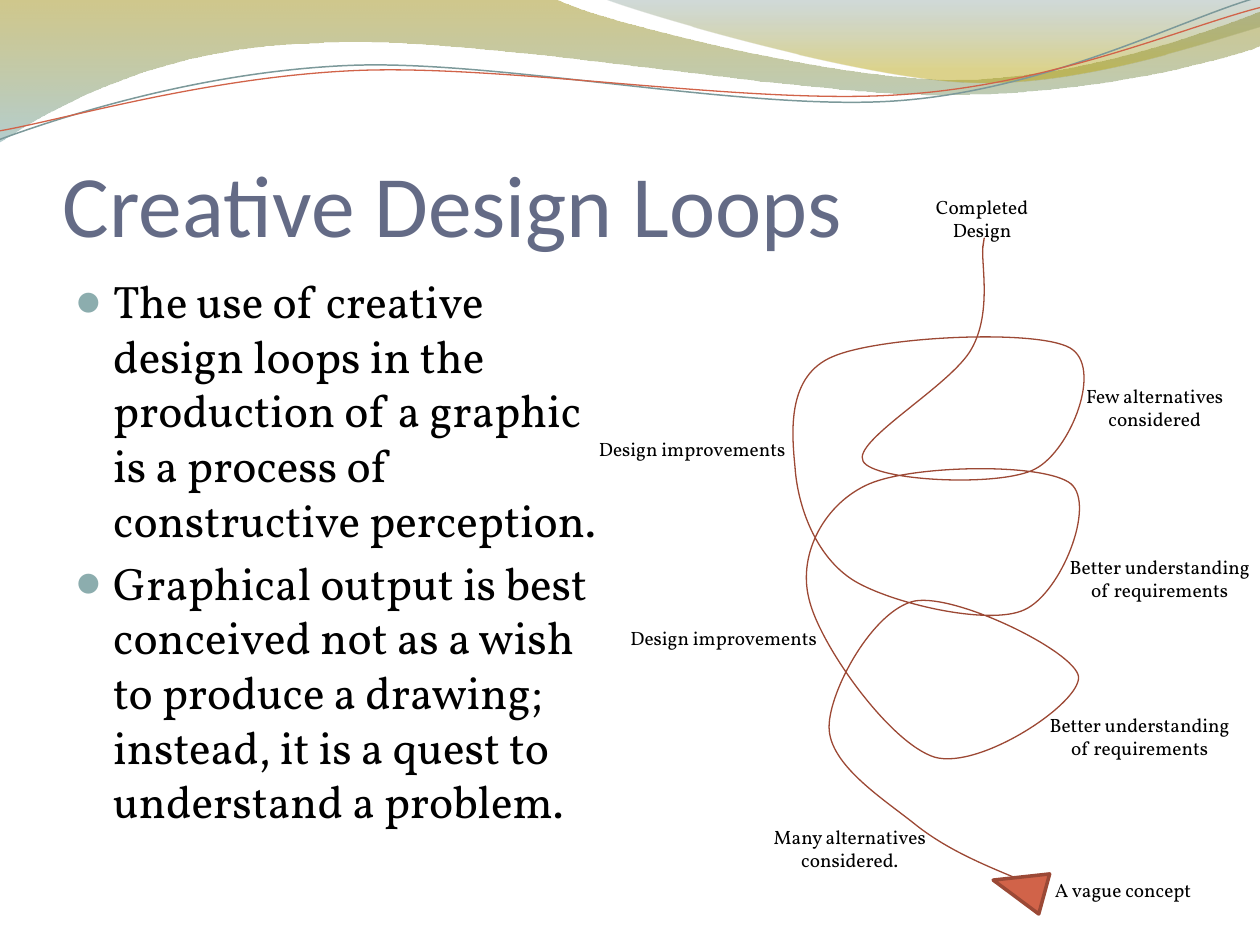
"""Build the Creative Design Loops slide with its wave header and spiral diagram."""
from lxml import etree
from pptx import Presentation
from pptx.dml.color import RGBColor
from pptx.enum.shapes import MSO_SHAPE
from pptx.enum.text import MSO_ANCHOR, MSO_AUTO_SIZE, PP_ALIGN
from pptx.oxml.ns import qn
from pptx.util import Pt

PX = 9144
TRIANGLE = MSO_SHAPE.ISOSCELES_TRIANGLE
TOP, BOTTOM = MSO_ANCHOR.TOP, MSO_ANCHOR.BOTTOM
LEFT, CENTER = PP_ALIGN.LEFT, PP_ALIGN.CENTER
FIT, FIXED = MSO_AUTO_SIZE.SHAPE_TO_FIT_TEXT, MSO_AUTO_SIZE.NONE
color = RGBColor.from_string

deck = Presentation()
deck.slide_width, deck.slide_height = 1000 * PX, 750 * PX
page = deck.slides.add_slide(deck.slide_layouts[6])


def draw_outline(start, segments, close=False):
    """Draw straight (2 numbers) and cubic (6 numbers) segments as one outline."""
    points = [(segment[i] * PX, segment[i + 1] * PX)
              for segment in segments for i in range(0, len(segment), 2)]
    builder = page.shapes.build_freeform(start[0] * PX, start[1] * PX, scale=1.0)
    builder.add_line_segments(points, close=close)
    shape = builder.convert_to_shape()
    shape.shadow.inherit = False
    steps = iter(list(shape._element.spPr.iter(qn("a:lnTo"))))
    for segment in segments:
        first = next(steps)
        if len(segment) == 6:
            first.tag_name = None
            curve = etree.Element(qn("a:cubicBezTo"))
            first.addprevious(curve)
            for node in (first, next(steps), next(steps)):
                curve.append(node[0])
                node.getparent().remove(node)
    return shape


def write_text(lines, at, size=11, font="Vollkorn", ink="000000", aligns=(CENTER,),
               anchor=TOP, fit=FIT, wrap=True, insets=(10, 5, 10, 5), bullet=None):
    """Write one paragraph per line into a text box."""
    box = page.shapes.add_textbox(*(value * PX for value in at))
    frame = box.text_frame
    frame.word_wrap, frame.auto_size, frame.vertical_anchor = wrap, fit, anchor
    (frame.margin_left, frame.margin_top,
     frame.margin_right, frame.margin_bottom) = (value * PX for value in insets)
    for index, line in enumerate(lines):
        para = frame.paragraphs[0] if index == 0 else frame.add_paragraph()
        para.alignment = aligns[index % len(aligns)]
        span = para.add_run()
        span.text = line
        span.font.size, span.font.name = Pt(size), font
        span.font.color.rgb = color(ink)
        if bullet:
            para.space_before = Pt(5)
            props = para._p.get_or_add_pPr()
            props.set("marL", str(30 * PX))
            props.set("indent", str(-30 * PX))
            tint = etree.SubElement(props, qn("a:buClr"))
            etree.SubElement(tint, qn("a:srgbClr"), val=bullet)
            etree.SubElement(props, qn("a:buSzPct"), val="95000")
            etree.SubElement(props, qn("a:buFont"), typeface="Calibri")
            etree.SubElement(props, qn("a:buChar"), char="●")


waves = [
    ((0, -1),
     [(440, -1), (476, 17, 664, 63, 758, 63), (853, 63, 958, 26, 1000, 9), (1001, 36),
      (983, 44, 870, 76, 746, 75), (622, 75, 382, 28, 257, 34), (129, 36, 46, 83, -1, 113),
      (0, -1)],
     [(0, "978500", 45), (1, "77A5A6", 55)]),
    ((479, -1),
     [(509, 11, 682, 62, 769, 65), (856, 69, 961, 32, 1000, 21), (1000, 0), (479, -1)],
     [(0, "648484", 30), (0.8, "B49F00", 45)]),
]
for start, segments, stops in waves:
    wave = draw_outline(start, segments, close=True)
    wave.line.fill.background()
    wave.fill.gradient()
    wave.fill.gradient_angle = 270
    for stop, (position, tone, opacity) in zip(wave.fill.gradient_stops, stops):
        stop.position = position
        stop.color.rgb = color(tone)
    for tone_node, (position, tone, opacity) in zip(
            wave._element.spPr.iter(qn("a:srgbClr")), stops):
        etree.SubElement(tone_node, qn("a:alpha"), val=str(opacity * 1000))

strokes = [
    ("7C999A", 0.85, (-1, 111),
     [(48, 93, 158, 57, 277, 52), (395, 47, 593, 89, 713, 80), (833, 71, 938, 15, 998, -2)]),
    ("D16349", 0.75, (-1, 104),
     [(47, 96, 164, 61, 283, 56), (403, 51, 597, 84, 717, 75), (836, 67, 941, 21, 1000, 6)]),
    ("9C4834", 0.75, (809, 698),
     [(780, 686, 751, 674, 726, 654), (701, 634, 658, 607, 658, 577),
      (658, 548, 693, 484, 726, 477), (759, 471, 853, 517, 856, 537),
      (858, 558, 778, 611, 742, 601), (706, 590, 650, 511, 642, 475),
      (633, 439, 655, 399, 690, 384), (725, 369, 829, 367, 850, 384),
      (870, 401, 842, 471, 813, 484), (785, 497, 708, 479, 678, 461),
      (647, 442, 633, 401, 631, 371), (628, 341, 625, 298, 661, 283),
      (698, 267, 822, 261, 849, 276), (876, 291, 850, 357, 822, 372),
      (795, 387, 693, 382, 685, 366), (676, 350, 755, 306, 771, 277),
      (787, 249, 779, 211, 780, 197), (782, 183, 781, 190, 780, 196)]),
]
for tone, width, start, segments in strokes:
    stroke = draw_outline(start, segments)
    stroke.fill.background()
    stroke.line.color.rgb = color(tone)
    stroke.line.width = Pt(width)

marker = page.shapes.add_shape(TRIANGLE, 792 * PX, 683 * PX, 33 * PX, 42 * PX)
marker.rotation = 285.2
marker.shadow.inherit = False
marker.fill.solid()
marker.fill.fore_color.rgb = color("D16349")
marker.line.color.rgb = color("9B4936")
marker.line.width = Pt(2)

write_text(["Creative Design Loops"], (50, 77, 900, 125), size=50, font="Calibri",
           ink="646B86", aligns=(LEFT,), anchor=BOTTOM, fit=FIXED, insets=(0, 5, 0, 0))
write_text(["The use of creative design loops in the production of a graphic "
            "is a process of constructive perception.",
            "Graphical output is best conceived not as a wish to produce a drawing; "
            "instead, it is a quest to understand a problem."],
           (50, 212, 442, 480), size=26, aligns=(LEFT,), fit=FIXED, bullet="8CADAE")
write_text(["Completed", "Design"], (733, 150, 104, 47), aligns=(LEFT, CENTER), wrap=False)

labels = [
    ("A vague concept", (800, 692, 183, 29)),
    ("Many alternatives considered.", (583, 650, 183, 47)),
    ("Design improvements", (458, 342, 183, 29)),
    ("Better understanding of requirements", (833, 436, 175, 47)),
    ("Few alternatives considered", (825, 300, 183, 47)),
    ("Better understanding of requirements", (817, 561, 175, 47)),
    ("Design improvements", (483, 492, 183, 29)),
]
for label, at in labels:
    write_text([label], at)

deck.save("out.pptx")
